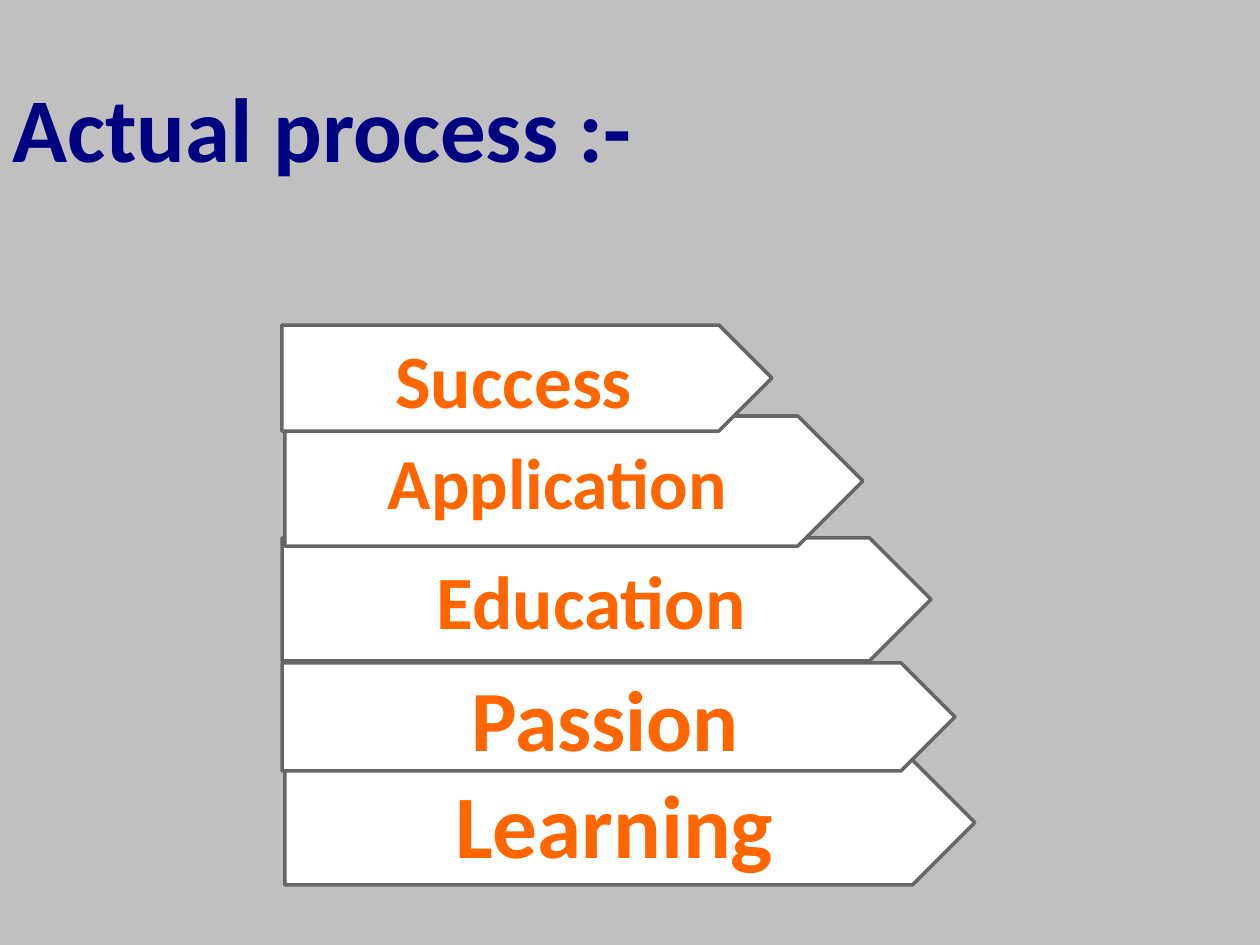
from dataclasses import dataclass

from pptx import Presentation
from pptx.dml.color import RGBColor
from pptx.enum.shapes import MSO_SHAPE
from pptx.enum.text import MSO_ANCHOR, PP_ALIGN
from pptx.shapes.autoshape import Shape
from pptx.slide import Slide
from pptx.util import Emu, Pt

PLATE = MSO_SHAPE.PENTAGON
MIDDLE = MSO_ANCHOR.MIDDLE
LEFT, CENTER = PP_ALIGN.LEFT, PP_ALIGN.CENTER
SCALE = 914400 / 126
GREY, WHITE, EDGE = "C0C0C0", "FFFFFF", "666666"
NAVY, ORANGE = "000080", "FF6600"


@dataclass
class Step:
    """One arrow of the stack, in px, with its label and point size."""
    label: str
    left: int
    top: int
    width: int
    height: int
    size: int


STEPS = [
    Step("Learning", 285, 760, 690, 125, 51),
    Step("Passion", 282, 663, 673, 108, 49),
    Step("Education", 282, 538, 649, 123, 43),
    Step("Application", 285, 416, 578, 130, 41),
    Step("Success", 282, 325, 490, 106, 43),
]


def px(count: int) -> Emu:
    """Turn px into EMU."""
    return Emu(round(count * SCALE))


def color(code: str) -> RGBColor:
    """Turn a hex string into a colour."""
    return RGBColor.from_string(code)


def write(shape: Shape, text: str, size: int, code: str,
          align: PP_ALIGN, space: float = 1.0) -> None:
    """Put one bold line of text in a shape."""
    frame = shape.text_frame
    frame.word_wrap = True
    frame.vertical_anchor = MIDDLE
    para = frame.paragraphs[0]
    para.alignment = align
    para.line_spacing = space
    run = para.add_run()
    run.text = text
    style = {"name": "Calibri", "size": Pt(size), "bold": True}
    for key, value in style.items():
        setattr(run.font, key, value)
    run.font.color.rgb = color(code)


def draw(slide: Slide, step: Step) -> None:
    """Draw one arrow with its label."""
    box = map(px, (step.left, step.top, step.width, step.height))
    shape = slide.shapes.add_shape(PLATE, *box)
    shape.shadow.inherit = False
    shape.fill.solid()
    shape.fill.fore_color.rgb = color(WHITE)
    shape.line.color.rgb = color(EDGE)
    shape.line.width = Pt(2)
    write(shape, step.label, step.size, ORANGE, CENTER)


def main() -> None:
    """Build the slide and save it."""
    deck = Presentation()
    deck.slide_width, deck.slide_height = px(1260), px(945)
    slide = deck.slides.add_slide(deck.slide_layouts[6])
    back = slide.background.fill
    back.solid()
    back.fore_color.rgb = color(GREY)
    title = slide.shapes.add_textbox(px(0), px(25), px(896), px(217))
    write(title, "Actual process :-", 52, NAVY, LEFT, 0.9)
    for step in STEPS:
        draw(slide, step)
    deck.save("out.pptx")


if __name__ == "__main__":
    main()
